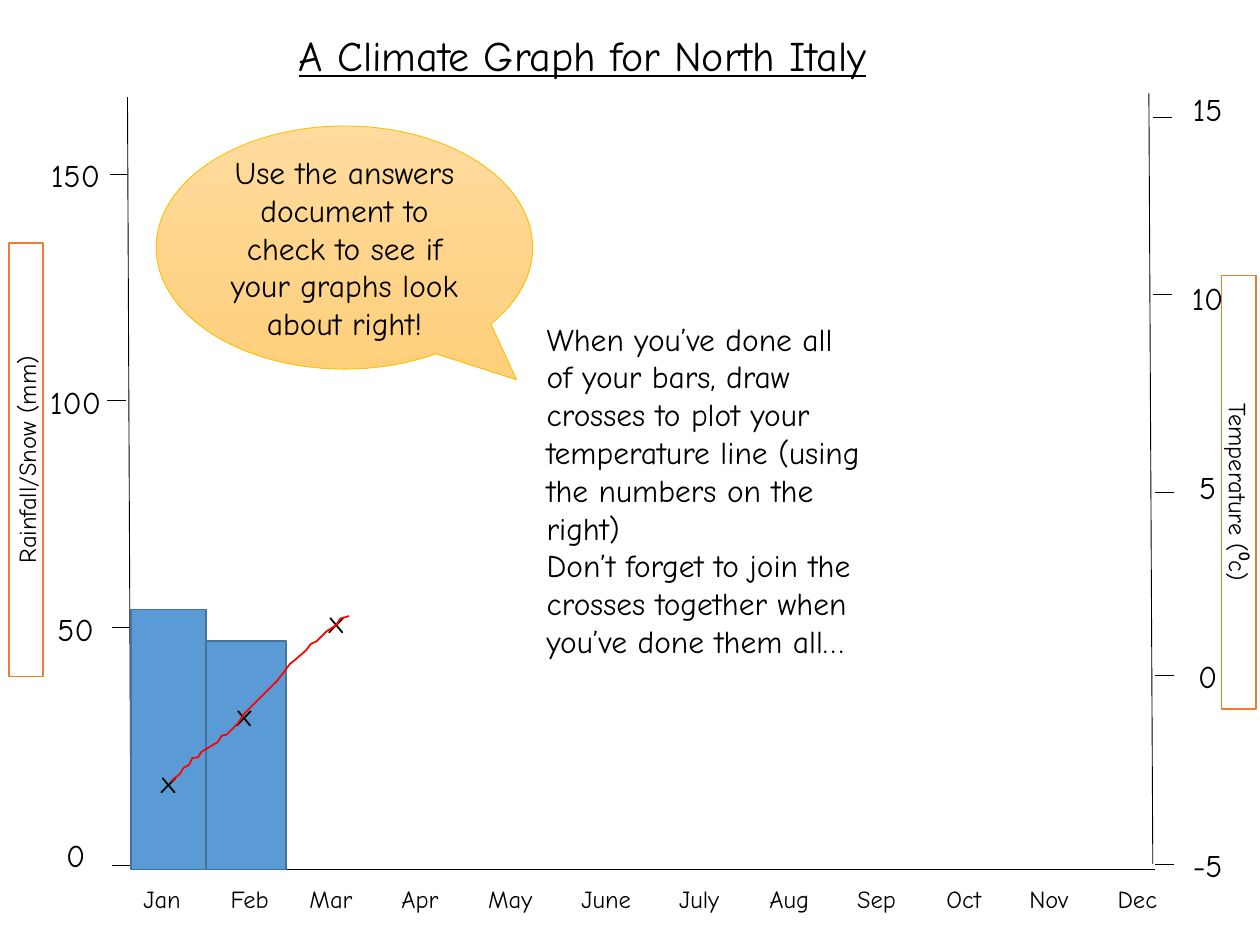
import pptx
import pptx.dml.color
import pptx.enum.shapes
import pptx.enum.text
import pptx.oxml.xmlchemy
import pptx.util
from pptx.util import Cm

SHAPES = pptx.enum.shapes.MSO_SHAPE
ALIGN = pptx.enum.text.PP_ALIGN
ANCHOR = pptx.enum.text.MSO_ANCHOR
FIT_SHAPE = pptx.enum.text.MSO_AUTO_SIZE.SHAPE_TO_FIT_TEXT
BASELINE = 17.53

MONTHS = ["Jan", "Feb", "Mar", "Apr", "May", "June",
          "July", "Aug", "Sep", "Oct", "Nov", "Dec"]
MONTH_TABS = [1.76, 3.35, 5.2, 6.95, 8.83, 10.8,
              12.62, 14.39, 16.19, 17.86, 19.64]
AXES = [(2.57, 1.96, 2.64, BASELINE), (2.64, BASELINE, 23.29, BASELINE),
        (23.16, 1.88, 23.24, 17.42)]
RAINFALL_TICKS = [(2.59, 3.51), (2.54, 8.08), (2.64, 12.65), (2.64, 17.45)]
TEMPERATURE_TICKS = [(23.24, 2.36), (23.24, 5.94), (23.29, 9.93),
                     (23.29, 13.61), (23.29, 17.42)]
TICK_LENGTH = 0.38
BARS = [(2.64, 1.52, 5.24), (4.16, 1.6, 4.6)]
CROSSES = [(3, 15.24), (4.52, 13.89), (6.38, 12.01)]
TEMPERATURE_LINE = [
    (3.45, 15.75), (3.63, 15.6), (3.7, 15.48), (3.81, 15.42), (3.88, 15.28),
    (3.99, 15.27), (4.06, 15.16), (4.39, 14.96), (4.47, 14.83), (4.57, 14.81),
    (4.8, 14.58), (4.93, 14.38), (5.59, 13.72), (5.77, 13.49), (5.84, 13.39),
    (5.94, 13.31), (6.17, 13.11), (6.27, 12.98), (6.38, 12.93), (6.58, 12.73),
    (6.78, 12.6), (6.86, 12.47), (7.04, 12.42)]


def colour(hex_string):
    return pptx.dml.color.RGBColor.from_string(hex_string)


def set_attributes(target, values):
    for name, value in values.items():
        setattr(target, name, value)


def write_text(shape, paragraphs, size, align=ALIGN.LEFT, gap=0,
               underline=None, **frame_format):
    """Fill a shape with paragraphs; gap is the space in points between them."""
    frame = shape.text_frame
    set_attributes(frame, frame_format)
    frame.text = "\n".join(paragraphs)
    font_format = {"name": "Comic Neue", "size": pptx.util.Pt(size),
                   "underline": underline}
    for index, paragraph in enumerate(frame.paragraphs):
        paragraph.alignment = align
        if index and gap:
            paragraph.space_before = pptx.util.Pt(gap)
        for run in paragraph.runs:
            set_attributes(run.font, font_format)
            run.font.color.rgb = colour("000000")


def set_outline(shape, line_colour, width):
    shape.line.color.rgb = colour(line_colour)
    shape.line.width = pptx.util.Pt(width)


def add_text(slide, box, paragraphs, size=18, wrap=False, **text_format):
    shape = slide.shapes.add_textbox(*map(Cm, box))
    write_text(shape, paragraphs, size, word_wrap=wrap, auto_size=FIT_SHAPE,
               **text_format)
    return shape


def add_line(slide, *ends):
    connector = slide.shapes.add_connector(
        pptx.enum.shapes.MSO_CONNECTOR.STRAIGHT, *map(Cm, ends))
    set_outline(connector, "000000", 0.5)
    properties = connector._element.spPr
    properties.append(pptx.oxml.xmlchemy.OxmlElement("a:effectLst"))


def add_box(slide, kind, box, fill, outline, width=1):
    shape = slide.shapes.add_shape(kind, *map(Cm, box))
    shape.shadow.inherit = False
    if fill:
        shape.fill.solid()
        shape.fill.fore_color.rgb = colour(fill)
    set_outline(shape, outline, width)
    return shape


def add_title(slide):
    title = slide.shapes.title
    set_attributes(title, {"left": Cm(5.77), "top": Cm(0.46),
                           "width": Cm(13.46), "height": Cm(1.27)})
    write_text(title, ["A Climate Graph for North Italy"], 24, underline=True,
               word_wrap=False, auto_size=FIT_SHAPE,
               vertical_anchor=ANCHOR.TOP)


def add_axes(slide):
    for axis in AXES:
        add_line(slide, *axis)
    for ticks, length in ((RAINFALL_TICKS, -TICK_LENGTH),
                          (TEMPERATURE_TICKS, TICK_LENGTH)):
        for left, top in ticks:
            add_line(slide, left, top, left + length, top)
    add_text(slide, (0.74, 3.02, 1.57, 14.88), ["150", "100", "50", "0"],
             align=ALIGN.CENTER, gap=108)
    add_text(slide, (23.75, 1.7, 1.19, 16.41), ["15", "10", "5", "0", "-5"],
             align=ALIGN.CENTER, gap=86.4)


def add_months(slide):
    shape = add_text(slide, (2.64, 17.7, 21.11, 0.86), ["\t".join(MONTHS)],
                     size=14, wrap=True)
    properties = shape.text_frame.paragraphs[0]._p.get_or_add_pPr()
    tab_list = pptx.oxml.xmlchemy.OxmlElement("a:tabLst")
    for position in MONTH_TABS:
        tab = pptx.oxml.xmlchemy.OxmlElement("a:tab")
        tab.set("pos", str(int(Cm(position))))
        tab.set("algn", "l")
        tab_list.append(tab)
    properties.append(tab_list)


def add_axis_name(slide, left, top, rotation, name):
    shape = add_box(slide, SHAPES.RECTANGLE, (left, top, 8.74, 0.69),
                    "FFFFFF", "ED7D31")
    shape.rotation = rotation
    write_text(shape, [name], 14, align=ALIGN.CENTER, word_wrap=True,
               vertical_anchor=ANCHOR.MIDDLE)


def add_temperature_line(slide):
    points = [(Cm(left), Cm(top)) for left, top in TEMPERATURE_LINE]
    builder = slide.shapes.build_freeform(*points[0])
    builder.add_line_segments(points[1:], close=False)
    shape = builder.convert_to_shape()
    shape.shadow.inherit = False
    shape.fill.background()
    set_outline(shape, "FF0000", 1)


def add_callout(slide):
    shape = add_box(slide, SHAPES.OVAL_CALLOUT, (3.15, 2.54, 7.59, 4.9),
                    None, "FFC000", 0.5)
    shape.adjustments[0] = 0.457
    shape.adjustments[1] = 0.544
    shape.fill.gradient()
    shape.fill.gradient_angle = 270
    for stop, shade in zip(shape.fill.gradient_stops, ("FFDB9E", "FFD07C")):
        stop.color.rgb = colour(shade)
    write_text(shape, ["Use the answers document to check to see if your "
                       "graphs look about right!"], 18, align=ALIGN.CENTER,
               word_wrap=True, vertical_anchor=ANCHOR.MIDDLE)


def main():
    presentation = pptx.Presentation()
    set_attributes(presentation, {"slide_width": Cm(25.4),
                                  "slide_height": Cm(19.05)})
    slide = presentation.slides.add_slide(presentation.slide_layouts[5])
    add_title(slide)
    add_axes(slide)
    add_text(slide, (10.77, 6.32, 6.86, 7.95), [
        "When you’ve done all of your bars, draw crosses to plot your "
        "temperature line (using the numbers on the right)",
        "Don’t forget to join the crosses together when you’ve done them "
        "all…"], wrap=True)
    add_months(slide)
    add_axis_name(slide, -3.84, 8.92, 270, "Rainfall/Snow (mm)")
    add_axis_name(slide, 20.6, 9.58, 90, "Temperature (⁰c)")
    for left, width, height in BARS:
        add_box(slide, SHAPES.RECTANGLE,
                (left, BASELINE - height, width, height), "5B9BD5", "43739E")
    for left, top in CROSSES:
        add_text(slide, (left, top, 0.89, 1.02), ["x"])
    add_temperature_line(slide)
    add_callout(slide)
    presentation.save("out.pptx")


if __name__ == "__main__":
    main()
